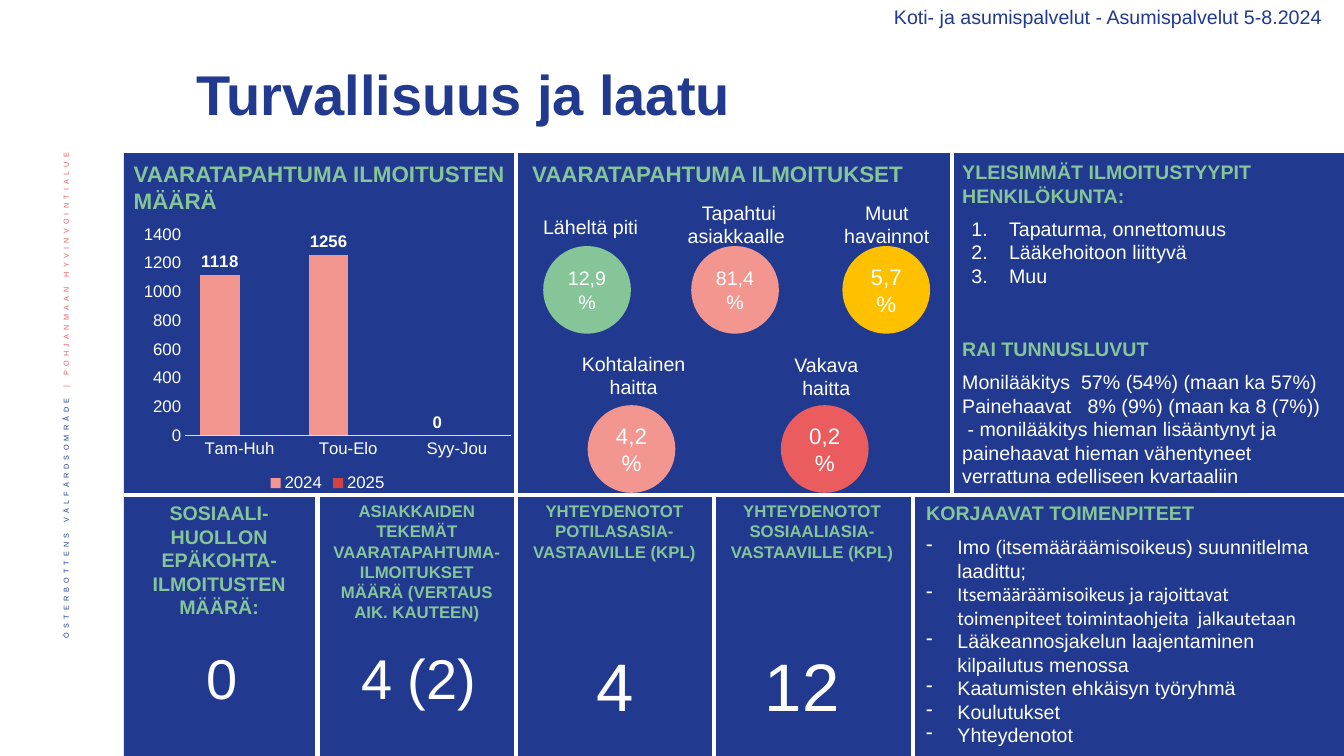
from dataclasses import dataclass

from lxml import etree
from pptx import Presentation
from pptx import util as u
from pptx.chart import data as cd
from pptx.dml import color as dc
from pptx.enum import chart as ch, shapes, text
from pptx.oxml import ns

NAVY, GREEN, WHITE = "213A8F", "85C598", "FFFFFF"
ROSE, RED, GOLD = "F39690", "EB5C5F", "FFC000"
LEFT, MID = text.PP_ALIGN.LEFT, text.PP_ALIGN.CENTER
RIGHT = text.PP_ALIGN.RIGHT
WIDE, HIGH = 33.87, 19.05
EDGE, TOP, ROW = 3.12, 3.86, 12.47


@dataclass
class Note:
    x: float
    y: float
    w: float
    h: float
    lines: list
    size: float = 14
    hue: str = WHITE
    bold: bool = False
    align: text.PP_ALIGN = LEFT
    mark: str = ""
    dent: float = 0


@dataclass
class Rate:
    x: float
    y: float
    fill: str
    value: str
    size: float
    label: Note


@dataclass
class Tile:
    head: str
    size: float
    value: str
    big: float


def rgb(code: str) -> dc.RGBColor:
    return dc.RGBColor.from_string(code)


def style(font, size: float, hue: str, bold: bool = False, face: str = "Arial") -> None:
    font.name, font.size, font.bold = face, u.Pt(size), bold
    font.color.rgb = rgb(hue)


def write(para, words: str, *, size: float = 14, hue: str = WHITE,
          bold: bool = False, align=LEFT, face: str = "Arial"):
    para.alignment = align
    run = para.add_run()
    run.text = words
    style(run.font, size, hue, bold, face)
    return run


def bullet(para, mark: str, dent: float) -> None:
    props = para._p.get_or_add_pPr()
    props.set("marL", str(u.Cm(dent)))
    props.set("indent", str(-u.Cm(dent)))
    if mark == "1.":
        etree.SubElement(props, ns.qn("a:buAutoNum"), type="arabicPeriod")
    else:
        etree.SubElement(props, ns.qn("a:buChar"), char=mark)


def frame(slide, x: float, y: float, w: float, h: float):
    body = slide.shapes.add_textbox(u.Cm(x), u.Cm(y), u.Cm(w), u.Cm(h)).text_frame
    body.word_wrap = True
    return body


def note(slide, n: Note) -> None:
    body = frame(slide, n.x, n.y, n.w, n.h)
    for i, line in enumerate(n.lines):
        para = body.add_paragraph() if i else body.paragraphs[0]
        if n.mark:
            bullet(para, n.mark, n.dent)
        words, face = line if isinstance(line, tuple) else (line, "Arial")
        write(para, words, size=n.size, hue=n.hue, bold=n.bold, align=n.align, face=face)


def block(slide, kind, x: float, y: float, w: float, h: float, fill: str):
    item = slide.shapes.add_shape(kind, u.Cm(x), u.Cm(y), u.Cm(w), u.Cm(h))
    item.shadow.inherit = False
    item.fill.solid()
    item.fill.fore_color.rgb = rgb(fill)
    item.line.fill.background()
    return item


def rule(slide, x1: float, y1: float, x2: float, y2: float) -> None:
    line = slide.shapes.add_connector(
        shapes.MSO_CONNECTOR.STRAIGHT, u.Cm(x1), u.Cm(y1), u.Cm(x2), u.Cm(y2))
    line.line.color.rgb = rgb(WHITE)
    line.line.width = u.Pt(3)
    etree.SubElement(line._element.spPr, ns.qn("a:effectLst"))


def rate(slide, r: Rate) -> None:
    note(slide, r.label)
    disc = block(slide, shapes.MSO_SHAPE.OVAL, r.x, r.y, 2.21, 2.21, r.fill)
    body = disc.text_frame
    body.word_wrap = True
    body.vertical_anchor = text.MSO_ANCHOR.MIDDLE
    write(body.paragraphs[0], r.value, size=r.size, align=MID)


def side(slide) -> None:
    body = frame(slide, 1.07, 3.61, 1.32, 14.55)
    body.vertical_anchor = text.MSO_ANCHOR.MIDDLE
    body._txBody.bodyPr.set("vert", "vert270")
    para = body.paragraphs[0]
    para.line_spacing = 0.9
    for words, hue in (("ÖSTERBOTTENS VÄLFÄRDSOMRÅDE ", NAVY),
                       ("| POHJANMAAN HYVINVOINTIALUE", RED)):
        props = write(para, words, size=9, hue=hue, align=RIGHT)._r.get_or_add_rPr()
        props.set("baseline", "30000")
        props.set("spc", "300")


def bars(slide) -> None:
    data = cd.CategoryChartData()
    data.categories = ["Tam-Huh", "Tou-Elo", "Syy-Jou"]
    data.add_series("2024", (1118, 1256, 0))
    data.add_series("2025", (None, None, None))
    chart = slide.shapes.add_chart(
        ch.XL_CHART_TYPE.COLUMN_CLUSTERED, u.Cm(3.43), u.Cm(5.54),
        u.Cm(9.65), u.Cm(6.96), data).chart
    style(chart.font, 10, NAVY)
    chart.has_title = False
    chart.has_legend = True
    chart.legend.position = ch.XL_LEGEND_POSITION.BOTTOM
    chart.legend.include_in_layout = False
    style(chart.legend.font, 12, WHITE)
    for axis in (chart.category_axis, chart.value_axis):
        axis.has_major_gridlines = False
        axis.major_tick_mark = axis.minor_tick_mark = ch.XL_TICK_MARK.NONE
        style(axis.tick_labels.font, 12, WHITE)
    chart.category_axis.format.line.color.rgb = rgb("D6DDF6")
    chart.category_axis.format.line.width = u.Pt(0.75)
    chart.value_axis.format.line.fill.background()
    plot = chart.plots[0]
    plot.gap_width, plot.overlap, plot.vary_by_categories = 75, 0, False
    for row, hue in zip(plot.series, (ROSE, "D3433F")):
        row.format.fill.solid()
        row.format.fill.fore_color.rgb = rgb(hue)
        row.data_labels.show_value = True
        row.data_labels.position = ch.XL_LABEL_POSITION.OUTSIDE_END
        style(row.data_labels.font, 12, WHITE, True)


def label(x: float, y: float, w: float, words: str) -> Note:
    return Note(x, y, w, 1.45, [words], align=MID)


def head(x: float, y: float, w: float, words: str, size: float = 14) -> Note:
    return Note(x, y, w, 0.9, [words], size, GREEN, True)


RULES = [(EDGE, ROW, WIDE, ROW), (13, TOP, 13, ROW), (24, TOP, 24, ROW)]
RULES += [(x, ROW, x, HIGH) for x in (8, 13, 18, 23)]
RATES = [
    Rate(13.69, 6.2, GREEN, "12,9 %", 14, label(13.26, 5.28, 3.25, "Läheltä piti")),
    Rate(17.42, 6.2, ROSE, "81,4 %", 14, label(16.81, 4.93, 3.63, "Tapahtui asiakkaalle ")),
    Rate(21.23, 6.2, GOLD, "5,7%", 16, label(20.57, 4.93, 3.56, "Muut havainnot")),
    Rate(14.81, 10.21, ROSE, "4,2%", 16, label(14.05, 8.74, 3.84, "Kohtalainen haitta")),
    Rate(19.68, 10.21, RED, "0,2%", 16, label(19.2, 8.76, 3.25, "Vakava haitta")),
]
TILES = [
    Tile("SOSIAALI-HUOLLON EPÄKOHTA-ILMOITUSTEN MÄÄRÄ:", 14, "0", 40),
    Tile("ASIAKKAIDEN TEKEMÄT VAARATAPAHTUMA-ILMOITUKSET MÄÄRÄ (VERTAUS AIK. KAUTEEN)",
         12, "4 (2)", 40),
    Tile("YHTEYDENOTOT POTILASASIA-VASTAAVILLE (KPL)", 12, "4", 48),
    Tile("YHTEYDENOTOT SOSIAALIASIA-VASTAAVILLE (KPL)", 12, "12 ", 48),
]
NOTES = [
    Note(18.69, 0, 14.88, 0.86, ["Koti- ja asumispalvelut - Asumispalvelut 5-8.2024"],
         hue=NAVY, align=RIGHT),
    head(EDGE, 3.91, 9.86, "VAARATAPAHTUMA ILMOITUSTEN MÄÄRÄ", 16),
    head(13.16, 3.91, 10.85, "VAARATAPAHTUMA ILMOITUKSET", 16),
    head(24, 3.91, 9.87, "YLEISIMMÄT ILMOITUSTYYPIT HENKILÖKUNTA:"),
    Note(24.23, 5.33, 9.47, 2.06,
         ["Tapaturma, onnettomuus", "Lääkehoitoon liittyvä", "Muu"], mark="1.", dent=0.95),
    head(24, 8.36, 9.87, "RAI TUNNUSLUVUT"),
    Note(24, 9.2, 9.87, 3.2, [
        "Monilääkitys  57% (54%) (maan ka 57%)",
        "Painehaavat   8% (9%) (maan ka 8 (7%))    - monilääkitys hieman lisääntynyt ja "
        "painehaavat hieman vähentyneet verrattuna edelliseen kvartaaliin"]),
    head(23.09, 12.5, 10.64, "KORJAAVAT TOIMENPITEET"),
    Note(23.09, 13.36, 10.64, 5.64, [
        "Imo (itsemääräämisoikeus) suunnitlelma laadittu; ",
        ("Itsemääräämisoikeus ja rajoittavat toimenpiteet toimintaohjeita  jalkautetaan",
         "Calibri"),
        "Lääkeannosjakelun laajentaminen kilpailutus menossa",
        "Kaatumisten ehkäisyn työryhmä", "Koulutukset", "Yhteydenotot"],
        mark="-", dent=0.79),
]


def main() -> None:
    deck = Presentation()
    deck.slide_width, deck.slide_height = u.Cm(WIDE), u.Cm(HIGH)
    slide = deck.slides.add_slide(deck.slide_layouts[6])
    side(slide)
    block(slide, shapes.MSO_SHAPE.RECTANGLE, EDGE, TOP, WIDE - EDGE, HIGH - TOP, NAVY)
    for ends in RULES:
        rule(slide, *ends)
    title = frame(slide, 4.7, 1.2, 25.35, 2.51)
    title.vertical_anchor = text.MSO_ANCHOR.MIDDLE
    title.paragraphs[0].line_spacing = 0.9
    write(title.paragraphs[0], "Turvallisuus ja laatu", size=40, hue=NAVY, bold=True)
    bars(slide)
    for item in RATES:
        rate(slide, item)
    for i, tile in enumerate(TILES):
        note(slide, Note(3.1 + 4.98 * i, 12.5, 4.85, 3.3, [tile.head], tile.size, GREEN, True, MID))
        note(slide, Note(3.1 + 4.95 * i, 16.1, 5, 2.3, [tile.value], tile.big, align=MID))
    for item in NOTES:
        note(slide, item)
    deck.save("out.pptx")


if __name__ == "__main__":
    main()
